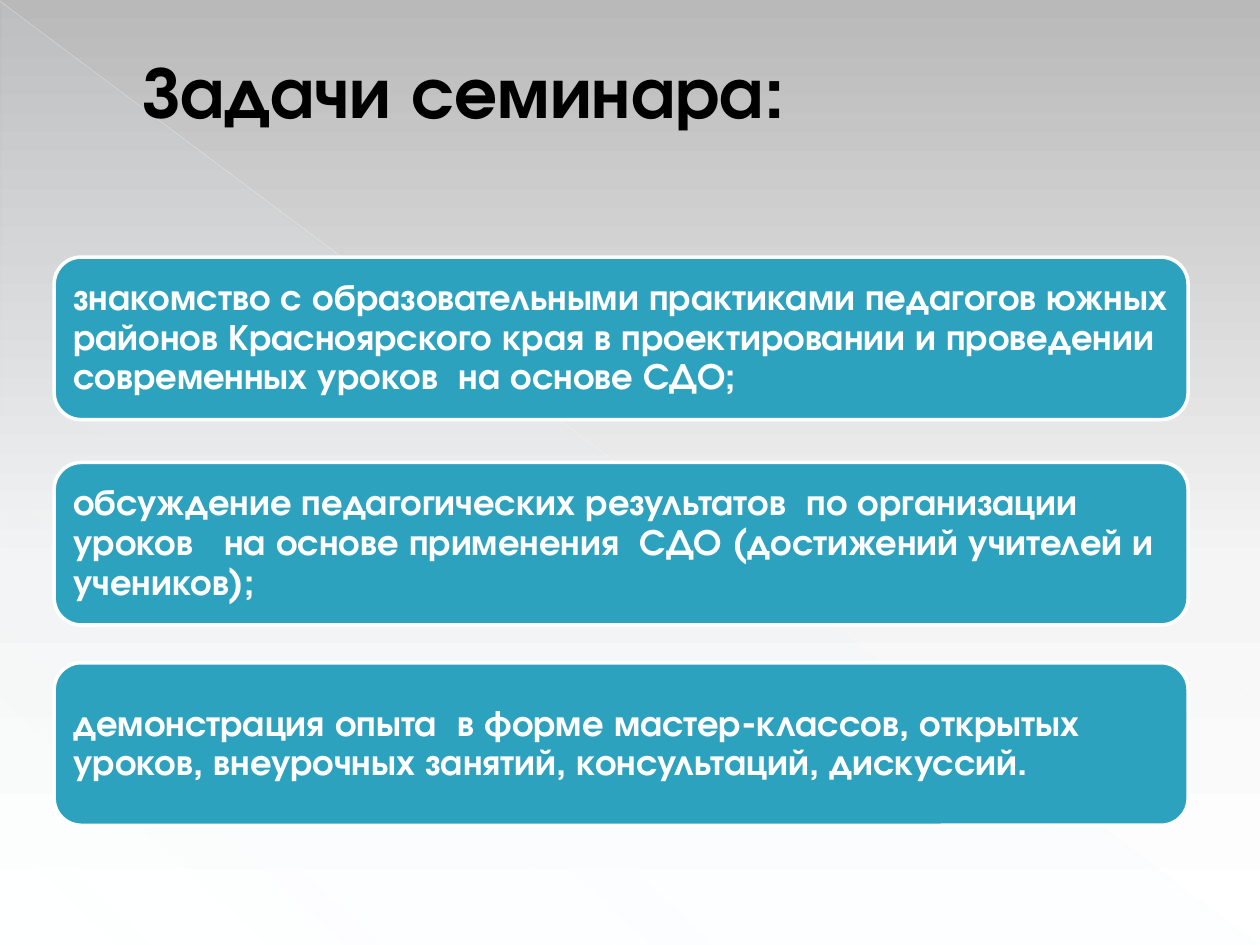
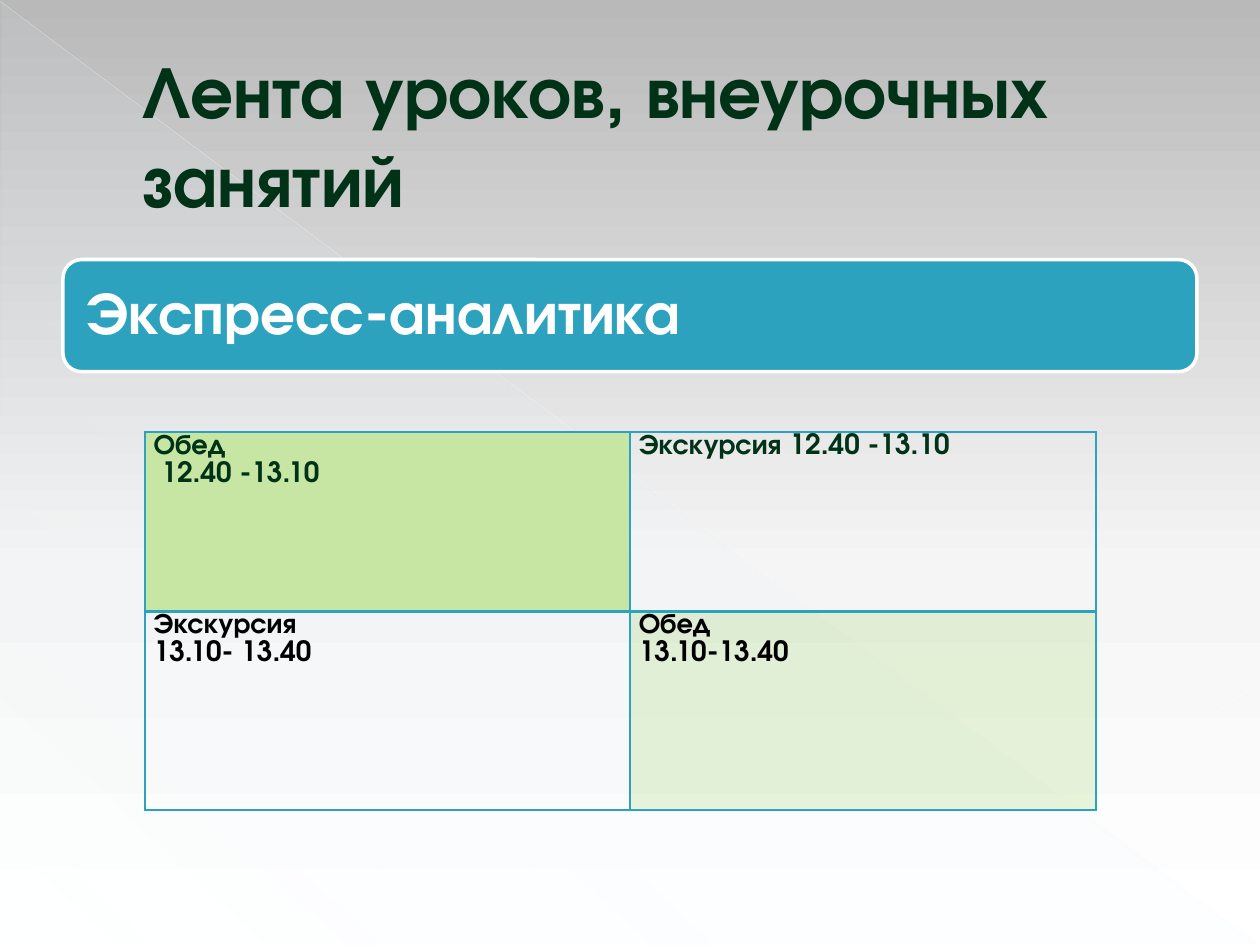
import pptx
import pptx.dml.color
import pptx.enum.shapes
import pptx.enum.text
import pptx.oxml
import pptx.oxml.ns
import pptx.util

Inches = pptx.util.Inches
Pt = pptx.util.Pt
qn = pptx.oxml.ns.qn
RGBColor = pptx.dml.color.RGBColor
ANCHOR = pptx.enum.text.MSO_ANCHOR
SHAPE = pptx.enum.shapes.MSO_SHAPE

FONT = "TeX Gyre Adventor"
BLACK = RGBColor(0x00, 0x00, 0x00)
WHITE = RGBColor(0xFF, 0xFF, 0xFF)
DARK_GREEN = RGBColor(0x00, 0x32, 0x17)
TEAL = RGBColor(0x2D, 0xA2, 0xBF)
DEEP_TEAL = RGBColor(0x1F, 0x70, 0x84)
PALE_BLUE = RGBColor(0xDE, 0xF5, 0xFA)
LIGHT_GREEN = RGBColor(0xC7, 0xE6, 0xA4)
LIME = RGBColor(0x92, 0xD0, 0x50)
GREY = RGBColor(0xB9, 0xB9, 0xB9)
NEAR_WHITE = RGBColor(0xF5, 0xF5, 0xF5)

# Backdrop: (position %, colour, opacity %)
BACKGROUND_STOPS = [(0, GREY, 100), (60, NEAR_WHITE, 100), (100, WHITE, 100)]
CORNER_STOPS = [(0, PALE_BLUE, 10), (70, PALE_BLUE, 8), (100, PALE_BLUE, 1)]
# Fine lines: start, end, width, opacity %
FINE_LINES = [
    ((0, 0.01), (9.99, 7.49), 0.39, 35),
    ((10, 5.41), (7.07, 7.49), 0.47, 45),
]

TASKS = [
    (2.04, "знакомство с образовательными практиками педагогов южных районов "
           "Красноярского края в проектировании и проведении современных "
           "уроков  на основе СДО;"),
    (3.67, "обсуждение педагогических результатов  по организации  уроков   "
           "на основе применения  СДО (достижений учителей и учеников);"),
    (5.26, "демонстрация опыта  в форме мастер-классов, открытых уроков, "
           "внеурочных занятий, консультаций, дискуссий."),
]

# Schedule cells: text, text colour, fill, opacity %
SCHEDULE = [
    [("Обед\n 12.40 -13.10", DARK_GREEN, LIGHT_GREEN, 100),
     ("Экскурсия 12.40 -13.10", DARK_GREEN, None, 100)],
    [("Экскурсия\n13.10- 13.40", BLACK, None, 100),
     ("Обед\n13.10-13.40", BLACK, LIME, 20)],
]
COLUMN_WIDTHS = [3.85, 3.7]
ROW_HEIGHTS = [1.42, 1.58]


def drawing_xml(body):
    """Parse an element whose tags use the a: prefix."""
    head, rest = body.split(">", 1)
    return pptx.oxml.parse_xml(f"{head} {pptx.oxml.ns.nsdecls('a')}>{rest}")


def set_gradient(fill, holder, stops, angle):
    """Give the holder of a fill a linear gradient."""
    fill.solid()
    stop_xml = "".join(
        f'<a:gs pos="{position * 1000}"><a:srgbClr val="{color}">'
        f'<a:alpha val="{opacity * 1000}"/></a:srgbClr></a:gs>'
        for position, color, opacity in stops)
    gradient = drawing_xml(
        f'<a:gradFill rotWithShape="1"><a:gsLst>{stop_xml}</a:gsLst>'
        f'<a:lin ang="{angle * 60000}" scaled="0"/></a:gradFill>')
    solid = next(holder.iter(qn("a:solidFill")))
    solid.getparent().replace(solid, gradient)


def set_opacity(element, opacity):
    for color in element.iter(qn("a:srgbClr")):
        color.append(drawing_xml(f'<a:alpha val="{opacity * 1000}"></a:alpha>'))


def style_font(paragraph, size, color):
    font = paragraph.font
    font.name = FONT
    font.size = Pt(size)
    font.bold = True
    font.color.rgb = color


def set_margins(frame, side, vertical):
    frame.margin_left = frame.margin_right = Inches(side)
    frame.margin_top = frame.margin_bottom = Inches(vertical)


def add_backdrop(slide):
    corner = slide.shapes.add_shape(
        SHAPE.RIGHT_TRIANGLE,
        Inches(0.01), Inches(0.02), Inches(9.98), Inches(7.48))
    corner.shadow.inherit = False
    corner.line.fill.background()
    set_gradient(corner.fill, corner._element.spPr, CORNER_STOPS, 133)

    for start, end, width, opacity in FINE_LINES:
        fine_line = slide.shapes.add_connector(
            pptx.enum.shapes.MSO_CONNECTOR.STRAIGHT,
            *(Inches(value) for value in start + end))
        fine_line.line.width = Pt(width)
        fine_line.line.color.rgb = WHITE
        set_opacity(fine_line._element, opacity)
        fine_line._element.spPr.append(
            drawing_xml("<a:effectLst></a:effectLst>"))


def add_titled_slide(prs, heading, color):
    slide = prs.slides.add_slide(prs.slide_layouts[5])
    add_backdrop(slide)

    title = slide.shapes.title
    slide.shapes._spTree.append(title._element)  # in front of the backdrop
    title.left, title.top = Inches(0.5), Inches(0.29)
    title.width, title.height = Inches(9), Inches(1.53)
    frame = title.text_frame
    frame.text = heading
    frame.word_wrap = True
    frame.auto_size = pptx.enum.text.MSO_AUTO_SIZE.NONE
    frame.vertical_anchor = ANCHOR.TOP
    set_margins(frame, 0.1, 0.07)
    frame.margin_left = Inches(0.63)

    paragraph = frame.paragraphs[0]
    paragraph.alignment = pptx.enum.text.PP_ALIGN.LEFT
    style_font(paragraph, 42, color)
    paragraph.runs[0]._r.get_or_add_rPr().insert(0, drawing_xml(
        f'<a:ln w="{Pt(0.5)}"><a:solidFill><a:srgbClr val="{DEEP_TEAL}"/>'
        '</a:solidFill></a:ln>'))
    return slide


def add_panel(slide, left, top, height, text, size, margin):
    panel = slide.shapes.add_shape(
        SHAPE.ROUNDED_RECTANGLE,
        Inches(left), Inches(top), Inches(9), Inches(height))
    panel.shadow.inherit = False
    panel.fill.solid()
    panel.fill.fore_color.rgb = TEAL
    panel.line.color.rgb = WHITE
    panel.line.width = Pt(2)

    frame = panel.text_frame
    frame.text = text
    frame.word_wrap = True
    frame.vertical_anchor = ANCHOR.MIDDLE
    set_margins(frame, margin, margin)
    paragraph = frame.paragraphs[0]
    paragraph.alignment = pptx.enum.text.PP_ALIGN.LEFT
    paragraph.line_spacing = 0.9
    style_font(paragraph, size, WHITE)


def set_borders(cell, widths):
    """Set the left, right, top and bottom borders, widths in points."""
    properties = cell._tc.get_or_add_tcPr()
    for index, (side, width) in enumerate(zip("LRTB", widths)):
        properties.insert(index, drawing_xml(
            f'<a:ln{side} w="{Pt(width)}"><a:solidFill>'
            f'<a:srgbClr val="{TEAL}"/></a:solidFill></a:ln{side}>'))


def fill_cell(cell, text, color, fill, opacity):
    cell.text = text
    set_margins(cell, 0.07, 0)
    for paragraph in cell.text_frame.paragraphs:
        paragraph.line_spacing = 1.07
        style_font(paragraph, 16, color)
    if fill is None:
        cell.fill.background()
    else:
        cell.fill.solid()
        cell.fill.fore_color.rgb = fill
        if opacity < 100:
            set_opacity(cell._tc.tcPr, opacity)


def add_schedule(slide):
    schedule = slide.shapes.add_table(
        len(ROW_HEIGHTS), len(COLUMN_WIDTHS), Inches(1.15), Inches(3.43),
        Inches(sum(COLUMN_WIDTHS)), Inches(sum(ROW_HEIGHTS))).table
    schedule.first_row = False
    schedule.horz_banding = False
    for column, width in zip(schedule.columns, COLUMN_WIDTHS):
        column.width = Inches(width)
    for row, height in zip(schedule.rows, ROW_HEIGHTS):
        row.height = Inches(height)

    # The line between the two rows is heavier
    border_widths = [(1, 1, 1, 2), (1, 1, 2, 1)]
    for row, entries, widths in zip(schedule.rows, SCHEDULE, border_widths):
        for cell, entry in zip(row.cells, entries):
            fill_cell(cell, *entry)
            set_borders(cell, widths)


def main():
    prs = pptx.Presentation()
    prs.slide_width, prs.slide_height = Inches(10), Inches(7.5)
    background = prs.slide_master.background
    set_gradient(background.fill, prs.slide_master._element.cSld,
                 BACKGROUND_STOPS, 90)

    # Seminar tasks
    tasks = add_titled_slide(prs, "Задачи семинара:", BLACK)
    for top, task in TASKS:
        add_panel(tasks, 0.43, top, 1.29, task, 21, 0.09)

    # Lesson timetable
    lessons = add_titled_slide(
        prs, "Лента уроков, внеурочных занятий", DARK_GREEN)
    add_panel(lessons, 0.5, 2.06, 0.89, "Экспресс-аналитика", 34, 0.14)
    add_schedule(lessons)

    prs.save("out.pptx")


if __name__ == "__main__":
    main()
